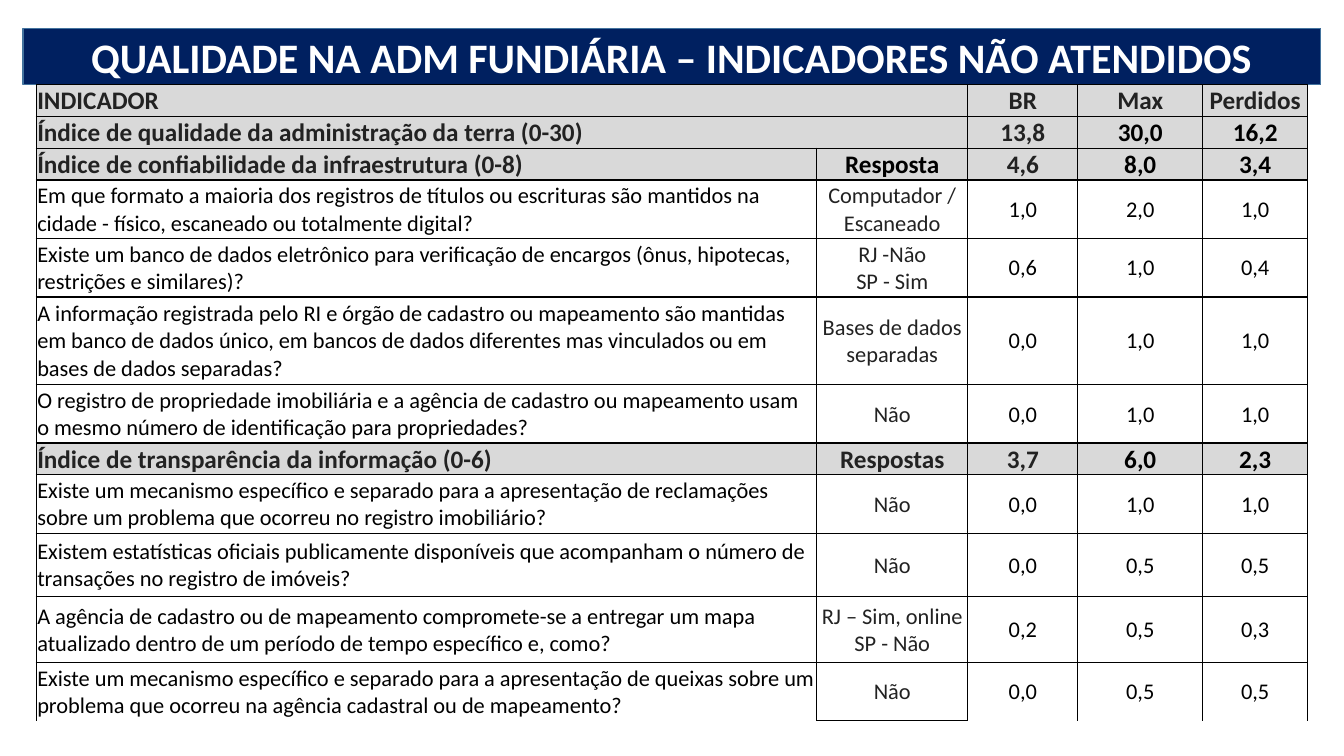
from lxml import etree
from pptx import Presentation, util as u
from pptx.dml.color import RGBColor
from pptx.enum import text as t
from pptx.oxml import ns

NAVY, EDGE, GREY, WHITE = "002060", "43739E", "D9D9D9", "FFFFFF"
BLACK, CHARCOAL = "000000", "222222"
RESPONSE, BR, MAX = 1, 2, 3

COLUMN_WIDTHS = [7.74, 1.5, 1.09, 1.24, 1.04]
ROW_HEIGHTS = [0.31, 0.31, 0.31, 0.58, 0.58, 0.87, 0.58, 0.31, 0.58, 0.63, 0.65, 0.58]
HEADING_ROWS = {0, 1, 2, 7}
MERGED_ROWS = {0, 1}
THIN_BELOW = {3, 5, 8}

INDICATORS = [
    ("INDICADOR", "", "BR", "Max", "Perdidos"),
    ("Índice de qualidade da administração da terra (0-30)", "", "13,8", "30,0", "16,2"),
    ("Índice de confiabilidade da infraestrutura (0-8)", "Resposta", "4,6", "8,0", "3,4"),
    ("Em que formato a maioria dos registros de títulos ou escrituras são mantidos na "
     "cidade - físico, escaneado ou totalmente digital?",
     "Computador / Escaneado", "1,0", "2,0", "1,0"),
    ("Existe um banco de dados eletrônico para verificação de encargos (ônus, hipotecas, "
     "restrições e similares)?", "RJ -Não\vSP - Sim", "0,6", "1,0", "0,4"),
    ("A informação registrada pelo RI e órgão de cadastro ou mapeamento são mantidas em "
     "banco de dados único, em bancos de dados diferentes mas vinculados ou em bases de "
     "dados separadas?", "Bases de dados separadas", "0,0", "1,0", "1,0"),
    ("O registro de propriedade imobiliária e a agência de cadastro ou mapeamento usam o "
     "mesmo número de identificação para propriedades?", "Não", "0,0", "1,0", "1,0"),
    ("Índice de transparência da informação (0-6)", "Respostas", "3,7", "6,0", "2,3"),
    ("Existe um mecanismo específico e separado para a apresentação de reclamações sobre "
     "um problema que ocorreu no registro imobiliário?", "Não", "0,0", "1,0", "1,0"),
    ("Existem estatísticas oficiais publicamente disponíveis que acompanham o número de "
     "transações no registro de imóveis?", "Não", "0,0", "0,5", "0,5"),
    ("A agência de cadastro ou de mapeamento compromete-se a entregar um mapa atualizado "
     "dentro de um período de tempo específico e, como?",
     "RJ – Sim, online\vSP - Não", "0,2", "0,5", "0,3"),
    ("Existe um mecanismo específico e separado para a apresentação de queixas sobre um "
     "problema que ocorreu na agência cadastral ou de mapeamento?",
     "Não", "0,0", "0,5", "0,5"),
]


def rgb(value):
    return RGBColor.from_string(value)


def border_widths(row, column):
    """Return the left, right, top and bottom widths in points; 0 is no line."""
    left = 0.5 if column == MAX else 1
    right = 0.5 if column == BR else 1
    if column == RESPONSE:
        return left, right, 1, 1
    top = 0.5 if row - 1 in THIN_BELOW else 1
    bottom = 0.5 if row in THIN_BELOW else 1
    return left, right, top, 0 if row == len(INDICATORS) - 1 else bottom


def text_color(row, column):
    if row not in HEADING_ROWS:
        return CHARCOAL if column == RESPONSE else BLACK
    if row == 0 or column <= BR and (row, column) != (2, RESPONSE):
        return CHARCOAL
    return BLACK


class SlideBuilder:
    font = "Calibri"

    def __init__(self, slide):
        self.slide = slide

    def put_text(self, frame, content, size, color, bold, centered):
        frame.word_wrap = True
        paragraph = frame.paragraphs[0]
        paragraph.text = content
        paragraph.alignment = t.PP_ALIGN.CENTER if centered else t.PP_ALIGN.LEFT
        font = paragraph.font
        font.name, font.size, font.bold = self.font, u.Pt(size), bold
        font.color.rgb = rgb(color)

    def banner(self, content, left, top, width, height):
        """Turn the title placeholder into a rounded, filled banner."""
        title = self.slide.shapes.title
        title.left, title.top = u.Inches(left), u.Inches(top)
        title.width, title.height = u.Inches(width), u.Inches(height)
        outline = etree.SubElement(title.element.spPr, ns.qn("a:prstGeom"), prst="roundRect")
        etree.SubElement(outline, ns.qn("a:avLst"))
        title.fill.solid()
        title.fill.fore_color.rgb = rgb(NAVY)
        title.line.color.rgb = rgb(EDGE)
        title.line.width = u.Pt(1)
        frame = title.text_frame
        frame.auto_size = t.MSO_AUTO_SIZE.NONE
        frame.vertical_anchor = t.MSO_ANCHOR.MIDDLE
        self.put_text(frame, content, 30, WHITE, True, True)

    def borders(self, cell, widths):
        properties = cell._tc.get_or_add_tcPr()
        for side, width in zip("LRTB", widths):
            line = etree.SubElement(properties, ns.qn(f"a:ln{side}"), w=str(u.Pt(width)))
            if width:
                fill = etree.SubElement(line, ns.qn("a:solidFill"))
                etree.SubElement(fill, ns.qn("a:srgbClr"), val=BLACK)
            else:
                etree.SubElement(line, ns.qn("a:noFill"))

    def cell(self, cell, content, row, column):
        heading = row in HEADING_ROWS
        self.borders(cell, border_widths(row, column))
        cell.fill.solid()
        cell.fill.fore_color.rgb = rgb(GREY if heading else WHITE)
        cell.margin_left = cell.margin_right = cell.margin_top = u.Inches(0.01)
        cell.margin_bottom = 0
        cell.vertical_anchor = t.MSO_ANCHOR.MIDDLE
        self.put_text(cell.text_frame, content, 18 if heading else 16,
                      text_color(row, column), heading, column > 0)

    def indicator_table(self, left, top):
        table = self.slide.shapes.add_table(
            len(ROW_HEIGHTS), len(COLUMN_WIDTHS), u.Inches(left), u.Inches(top),
            u.Inches(sum(COLUMN_WIDTHS)), u.Inches(sum(ROW_HEIGHTS))).table
        table.first_row = table.horz_banding = False
        for column, width in zip(table.columns, COLUMN_WIDTHS):
            column.width = u.Inches(width)
        for r, (height, contents) in enumerate(zip(ROW_HEIGHTS, INDICATORS)):
            table.rows[r].height = u.Inches(height)
            for c, content in enumerate(contents):
                self.cell(table.cell(r, c), content, r, c)
            if r in MERGED_ROWS:
                table.cell(r, 0).merge(table.cell(r, RESPONSE))


def main():
    deck = Presentation()
    deck.slide_width, deck.slide_height = u.Inches(13.33), u.Inches(7.5)
    builder = SlideBuilder(deck.slides.add_slide(deck.slide_layouts[5]))
    builder.banner("QUALIDADE NA ADM FUNDIÁRIA – INDICADORES NÃO ATENDIDOS",
                   0.23, 0.28, 12.87, 0.56)
    builder.indicator_table(0.36, 0.84)
    deck.save("out.pptx")


if __name__ == "__main__":
    main()
